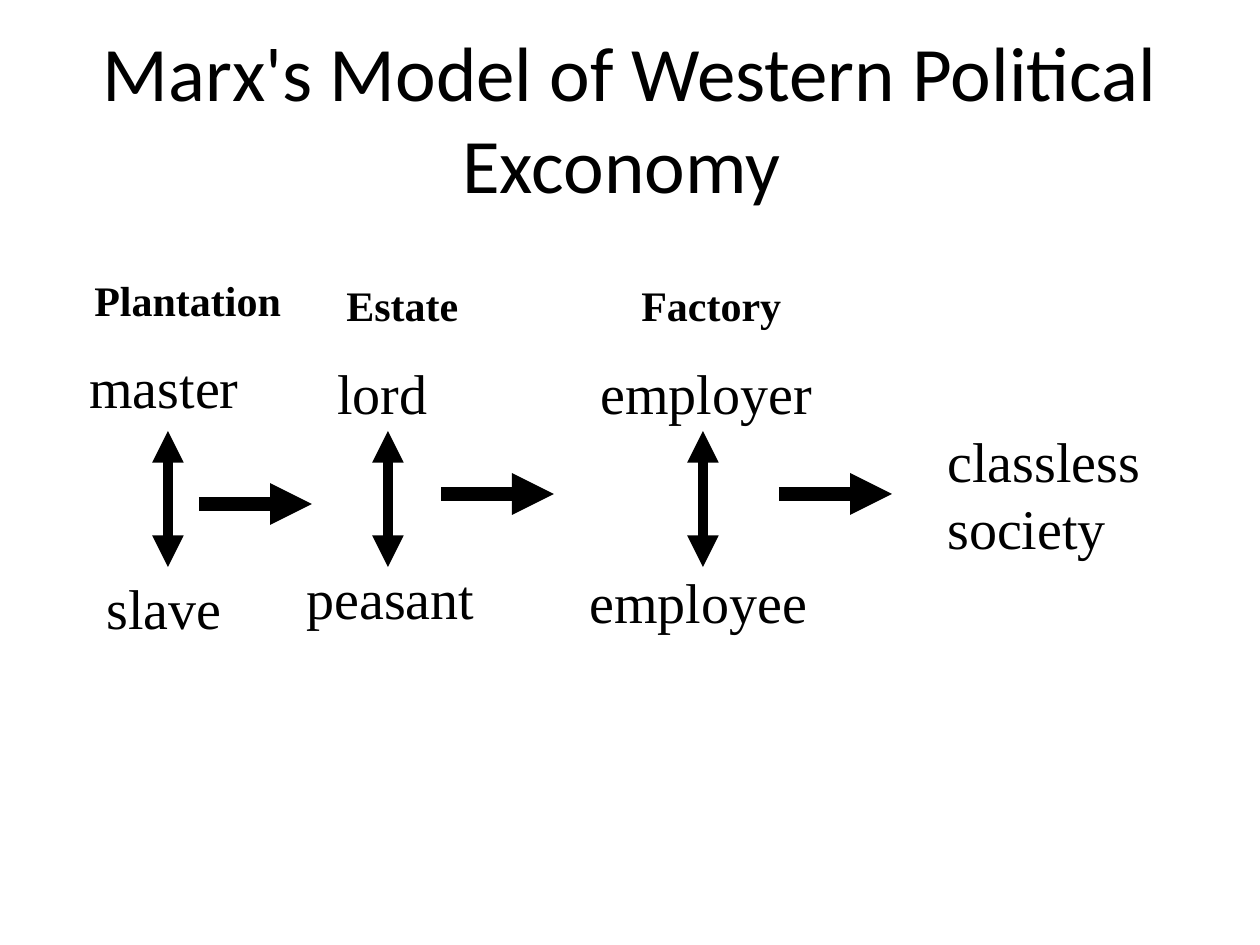
import pptx
import pptx.util
import pptx.dml.color
import pptx.enum.shapes
import pptx.enum.text
import pptx.oxml.ns
from lxml import etree

BLACK = pptx.dml.color.RGBColor(0, 0, 0)
PX = 914400 / 126
SERIF = "Times New Roman"


def write(tf, text, size=32, font=SERIF, bold=False, align=pptx.enum.text.PP_ALIGN.LEFT):
    for i, line in enumerate(text.split("\n")):
        p = tf.paragraphs[0] if i == 0 else tf.add_paragraph()
        p.alignment = align
        r = p.add_run()
        r.text = line
        r.font.size = pptx.util.Pt(size)
        r.font.name = font
        r.font.bold = bold
        r.font.color.rgb = BLACK


def arrow(s, x1, y1, x2, y2, width, ends):
    box = [round(v * PX) for v in (x1, y1, x2, y2)]
    sp = s.shapes.add_connector(pptx.enum.shapes.MSO_CONNECTOR.STRAIGHT, *box)
    sp.line.color.rgb = BLACK
    sp.line.width = pptx.util.Pt(width)
    ln = sp.line._get_or_add_ln()
    for end in ends:
        etree.SubElement(ln, pptx.oxml.ns.qn("a:" + end), type="triangle")
    etree.SubElement(sp._element.spPr, pptx.oxml.ns.qn("a:effectLst"))


prs = pptx.Presentation()
prs.slide_width = round(1260 * PX)
prs.slide_height = round(945 * PX)
s = prs.slides.add_slide(prs.slide_layouts[5])

# Title
sp = s.shapes.title
sp.left, sp.top, sp.width, sp.height = [round(v * PX) for v in (63, 38, 1134, 158)]
sp.text_frame.vertical_anchor = pptx.enum.text.MSO_ANCHOR.MIDDLE
write(sp.text_frame, "Marx's Model of Western Political Exconomy ", size=44,
      font="Calibri", align=pptx.enum.text.PP_ALIGN.CENTER)

# Stage headings, opposed classes and final stage: text, left, top, width, height, size
labels = [
    ("Plantation", 82, 268, 212, 63, 24),
    ("master", 77, 346, 175, 79, 32),
    ("slave", 94, 567, 141, 79, 32),
    ("Estate", 334, 273, 137, 63, 24),
    ("lord", 325, 352, 116, 79, 32),
    ("peasant", 294, 557, 194, 79, 32),
    ("Factory", 629, 273, 165, 63, 24),
    ("employer", 588, 352, 237, 79, 32),
    ("employee", 577, 561, 243, 79, 32),
    ("classless\nsociety", 935, 420, 219, 147, 32),
]
for text, x, y, w, h, size in labels:
    sp = s.shapes.add_textbox(*[round(v * PX) for v in (x, y, w, h)])
    tf = sp.text_frame
    tf.word_wrap = False
    tf.auto_size = pptx.enum.text.MSO_AUTO_SIZE.SHAPE_TO_FIT_TEXT
    write(tf, text, size=size, bold=size == 24)

# Conflict between the classes of each stage
for x in (168, 388, 703):
    arrow(s, x, 431, x, 567, 6, ("headEnd", "tailEnd"))

# Passage to the next stage
for x, y in ((199, 504), (441, 494), (779, 494)):
    arrow(s, x, y, x + 113, y, 8, ("tailEnd",))

prs.save("out.pptx")
